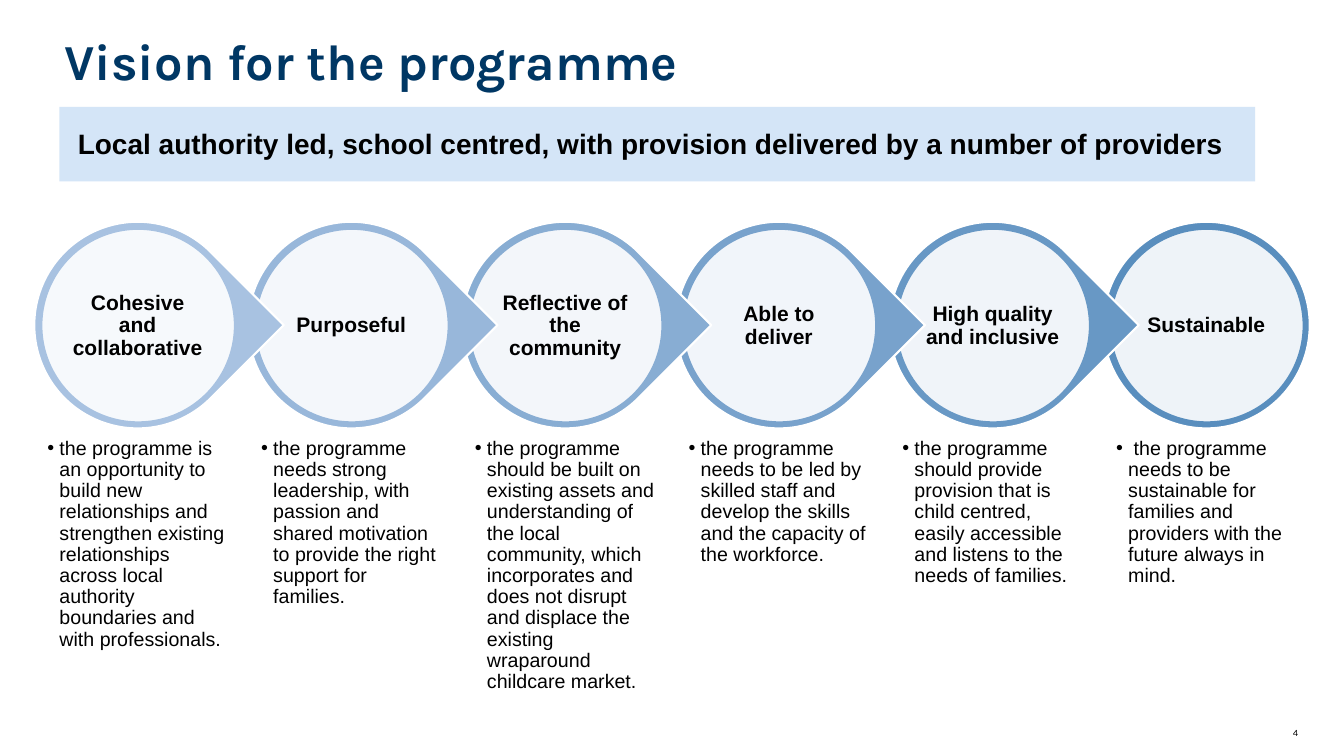
from pptx import Presentation, util as u
from pptx.dml import color
from pptx.enum import shapes, text
from pptx.oxml import ns
from lxml import etree

PX = 9144
HUES = {
    "ink": "000000", "navy": "003764", "band": "D4E5F7", "white": "FFFFFF",
    "step1": "A8C2E1", "step2": "98B7DA", "step3": "88ADD3",
    "step4": "78A2CC", "step5": "6898C5", "step6": "598EBE",
}
STEPS = [
    ("Cohesive and collaborative",
     "the programme is an opportunity to build new relationships and strengthen "
     "existing relationships across local authority boundaries and with professionals."),
    ("Purposeful",
     "the programme needs strong leadership, with passion and shared motivation "
     "to provide the right support for families."),
    ("Reflective of the community",
     "the programme should be built on existing assets and understanding of the "
     "local community, which incorporates and does not disrupt and displace the "
     "existing wraparound childcare market."),
    ("Able to deliver",
     "the programme needs to be led by skilled staff and develop the skills and "
     "the capacity of the workforce."),
    ("High quality and inclusive",
     "the programme should provide provision that is child centred, easily "
     "accessible and listens to the needs of families."),
    ("Sustainable",
     " the programme needs to be sustainable for families and providers with the "
     "future always in mind."),
]
LEFT, TOP, PITCH = 34, 220, 212
KIND = shapes.MSO_SHAPE


def write(frame, words, size=14, font="Arial", hue="ink", bold=False,
          align="LEFT", anchor="TOP", inset=(10, 5), space=1.0, bullet=False):
    frame.word_wrap = True
    frame.auto_size = text.MSO_AUTO_SIZE.NONE
    frame.vertical_anchor = getattr(text.MSO_ANCHOR, anchor)
    frame.margin_left = frame.margin_right = inset[0] * PX
    frame.margin_top = frame.margin_bottom = inset[1] * PX
    para = frame.paragraphs[0]
    para.alignment = getattr(text.PP_ALIGN, align)
    para.line_spacing = space
    run = para.add_run()
    run.text = words
    run.font.size = u.Pt(size)
    run.font.name = font
    run.font.bold = bold
    run.font.color.rgb = color.RGBColor.from_string(HUES[hue])
    if bullet:
        props = para._p.get_or_add_pPr()
        props.set("marL", str(12 * PX))
        props.set("indent", str(-12 * PX))
        etree.SubElement(props, ns.qn("a:buFont"), typeface="Arial")
        etree.SubElement(props, ns.qn("a:buChar"), char="•")


class Board:
    def __init__(self, slide, hues):
        self.slide = slide
        self.hues = hues

    def tint(self, hue):
        return color.RGBColor.from_string(self.hues[hue])

    def shape(self, kind, x, y, w, h, fill, line=None, alpha=None, turn=0):
        item = self.slide.shapes.add_shape(kind, x * PX, y * PX, w * PX, h * PX)
        item.shadow.inherit = False
        item.rotation = turn
        item.fill.solid()
        item.fill.fore_color.rgb = self.tint(fill)
        if alpha:
            solid = item._element.spPr.find(ns.qn("a:solidFill"))
            etree.SubElement(solid[0], ns.qn("a:alpha"), val=str(alpha * 1000))
        if line:
            item.line.color.rgb = self.tint(line)
            item.line.width = u.Pt(1.5)
        else:
            item.line.fill.background()
        return item

    def label(self, x, y, w, h, words, **style):
        box = self.slide.shapes.add_textbox(x * PX, y * PX, w * PX, h * PX)
        write(box.text_frame, words, **style)

    def step(self, rank, title, body):
        x = LEFT + PITCH * rank
        hue = f"step{rank + 1}"
        last = rank == len(STEPS) - 1
        self.shape(KIND.OVAL if last else KIND.TEAR, x, TOP, 205, 205, hue,
                   line="white", turn=0 if last else 45)
        self.shape(KIND.OVAL, x + 7, TOP + 7, 192, 192, "white",
                   line=hue, alpha=90)
        self.label(x + 34, TOP + 35, 137, 137, title, size=15, bold=True,
                   align="CENTER", anchor="MIDDLE", inset=(2, 2), space=0.9)
        self.label(x + 7, TOP + 209, 192, 113, body, inset=(6, 6),
                   space=0.9, bullet=True)


def main():
    deck = Presentation()
    deck.slide_width, deck.slide_height = 1333 * PX, 750 * PX
    board = Board(deck.slides.add_slide(deck.slide_layouts[6]), HUES)
    board.shape(KIND.RECTANGLE, 59, 106, 1186, 74, "band")
    board.label(1259, 718, 52, 17, "4", size=6.8, font="Karla",
                align="CENTER", anchor="MIDDLE")
    board.label(64, 37, 1088, 51, "Vision for the programme", size=36,
                font="Karla", hue="navy", bold=True, inset=(0, 0), space=0.9)
    board.label(42, 121, 1207, 44,
                "Local authority led, school centred, with provision "
                "delivered by a number of providers",
                size=20, bold=True, align="CENTER")
    for rank, (title, body) in reversed(list(enumerate(STEPS))):
        board.step(rank, title, body)
    deck.save("out.pptx")


if __name__ == "__main__":
    main()
